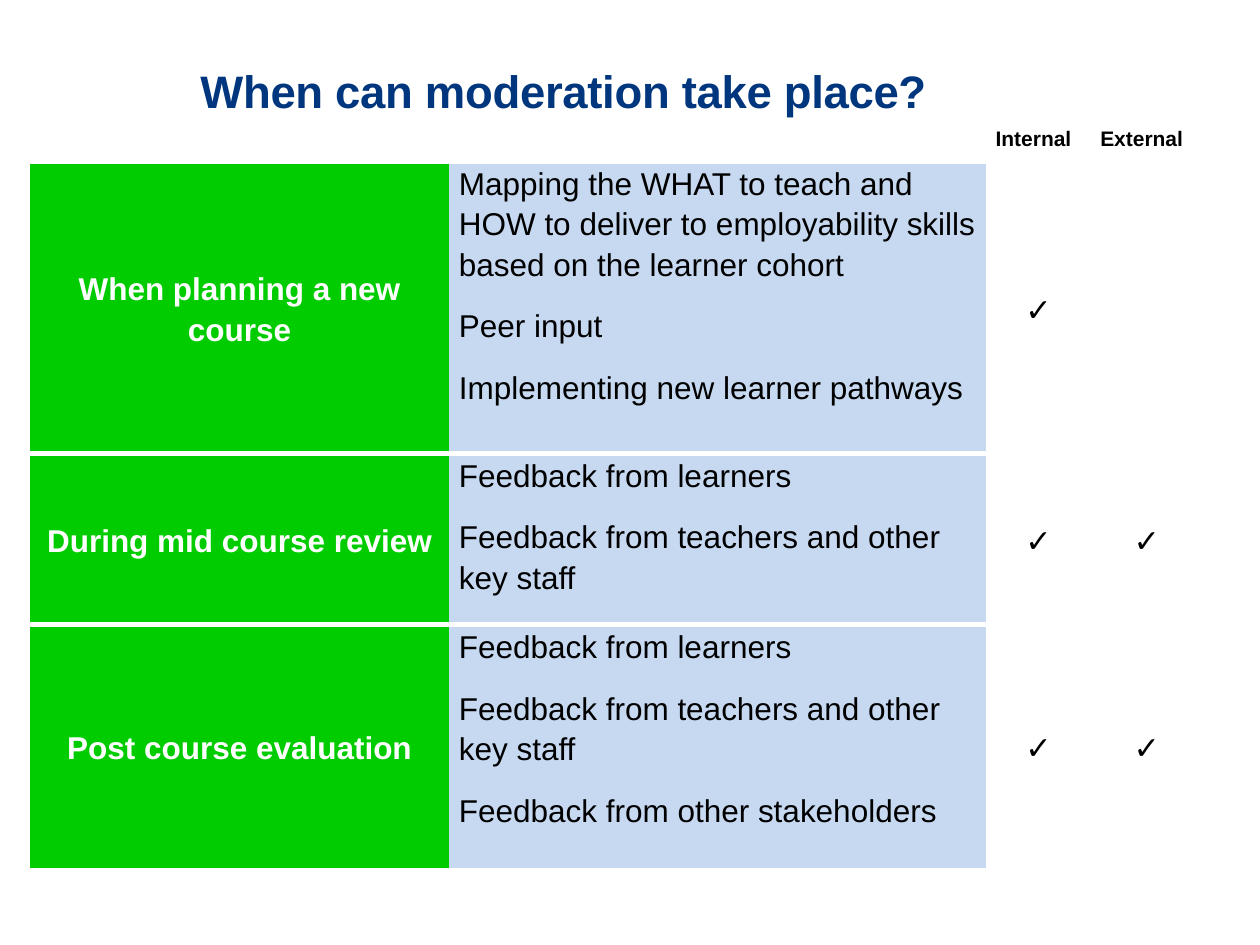
from pptx import Presentation
from pptx.dml.color import RGBColor
from pptx.enum.text import MSO_ANCHOR, PP_ALIGN
from pptx.oxml import parse_xml
from pptx.oxml.ns import nsdecls, qn
from pptx.util import Cm, Pt

NAVY = RGBColor(0x00, 0x36, 0x7D)
GREEN = RGBColor(0x00, 0xCC, 0x00)
BLUE = RGBColor(0xC6, 0xD9, 0xF1)
WHITE = RGBColor(0xFF, 0xFF, 0xFF)
BLACK = RGBColor(0x00, 0x00, 0x00)
FONT = "Arial"
PLAIN_STYLE = "{2D5ABB26-0587-4C30-8999-92F81FD0307C}"

TITLE = "When can moderation take place?"
HEADS = ["Internal", "External"]
TICK = "✓"
STAGES = [
    ("When planning a new course",
     ["Mapping the WHAT to teach and HOW to deliver to employability skills "
      "based on the learner cohort",
      "Peer input",
      "Implementing new learner pathways"],
     [TICK, ""]),
    ("During mid course review",
     ["Feedback from learners",
      "Feedback from teachers and other key staff"],
     [TICK, TICK]),
    ("Post course evaluation",
     ["Feedback from learners",
      "Feedback from teachers and other key staff",
      "Feedback from other stakeholders"],
     [TICK, TICK]),
]
COLS = [7.98, 0.4, 10.82, 2.11, 2.26]
ROWS = [0.76, 5.89, 3.45, 4.9]


def style(par, size, color, bold):
    font = par.font
    font.name, font.size, font.bold = FONT, Pt(size), bold
    font.color.rgb = color


def write(cell, lines, size=18, color=BLACK, bold=False, mid=True):
    cell.text = "\n".join(lines)
    if mid:
        cell.vertical_anchor = MSO_ANCHOR.MIDDLE
    for par in cell.text_frame.paragraphs:
        style(par, size, color, bold)
        par.line_spacing = 1.15
        par.space_before = par.space_after = Pt(6)
        if mid:
            par.alignment = PP_ALIGN.CENTER


def rule(cell, sides):
    """Draw a white 3 pt border on the given sides; call before filling."""
    for side in sides:
        cell._tc.get_or_add_tcPr().append(parse_xml(
            f'<a:ln{side} {nsdecls("a")} w="38100"><a:solidFill>'
            f'<a:srgbClr val="{WHITE}"/></a:solidFill></a:ln{side}>'))


def paint(cell, color):
    cell.fill.solid()
    cell.fill.fore_color.rgb = color


def add_title(slide):
    box = slide.shapes.add_textbox(Cm(4.04), Cm(0.46), Cm(16.94), Cm(1.9))
    frame = box.text_frame
    frame.word_wrap = True
    frame.vertical_anchor = MSO_ANCHOR.BOTTOM
    frame.margin_left = frame.margin_right = 0
    frame.margin_top = frame.margin_bottom = 0
    par = frame.paragraphs[0]
    par.line_spacing = 0.8
    run = par.add_run()
    run.text = TITLE
    style(par, 26, NAVY, True)
    run._r.get_or_add_rPr().set("spc", "-20")


def add_grid(slide):
    table = slide.shapes.add_table(
        len(ROWS), len(COLS), Cm(0.6), Cm(2.49),
        Cm(sum(COLS)), Cm(sum(ROWS))).table
    table.first_row = table.horz_banding = False
    table._tbl.tblPr.find(qn("a:tableStyleId")).text = PLAIN_STYLE
    for col, width in zip(table.columns, COLS):
        col.width = Cm(width)
    for row, height in zip(table.rows, ROWS):
        row.height = Cm(height)
    for cell in table.iter_cells():
        cell.margin_left = cell.margin_right = Cm(0.19)
        cell.margin_top = cell.margin_bottom = 0

    table.cell(0, 1).merge(table.cell(0, 2))
    for c in range(2):
        rule(table.cell(0, c), "B")
    for c, head in enumerate(HEADS, 3):
        write(table.cell(0, c), [head], size=12, bold=True, mid=False)

    for r, (stage, steps, ticks) in enumerate(STAGES, 1):
        name, body = table.cell(r, 0), table.cell(r, 2)
        name.merge(table.cell(r, 1))
        for cell, color in ((name, GREEN), (body, BLUE)):
            rule(cell, "TB" if r < len(STAGES) else "T")
            paint(cell, color)
        write(name, [stage], color=WHITE, bold=True)
        write(body, steps, mid=False)
        for c, tick in enumerate(ticks, 3):
            if tick:
                write(table.cell(r, c), [tick])


def main():
    deck = Presentation()
    deck.slide_width, deck.slide_height = Cm(25.4), Cm(19.05)
    slide = deck.slides.add_slide(deck.slide_layouts[6])
    add_title(slide)
    add_grid(slide)
    deck.save("out.pptx")


if __name__ == "__main__":
    main()
